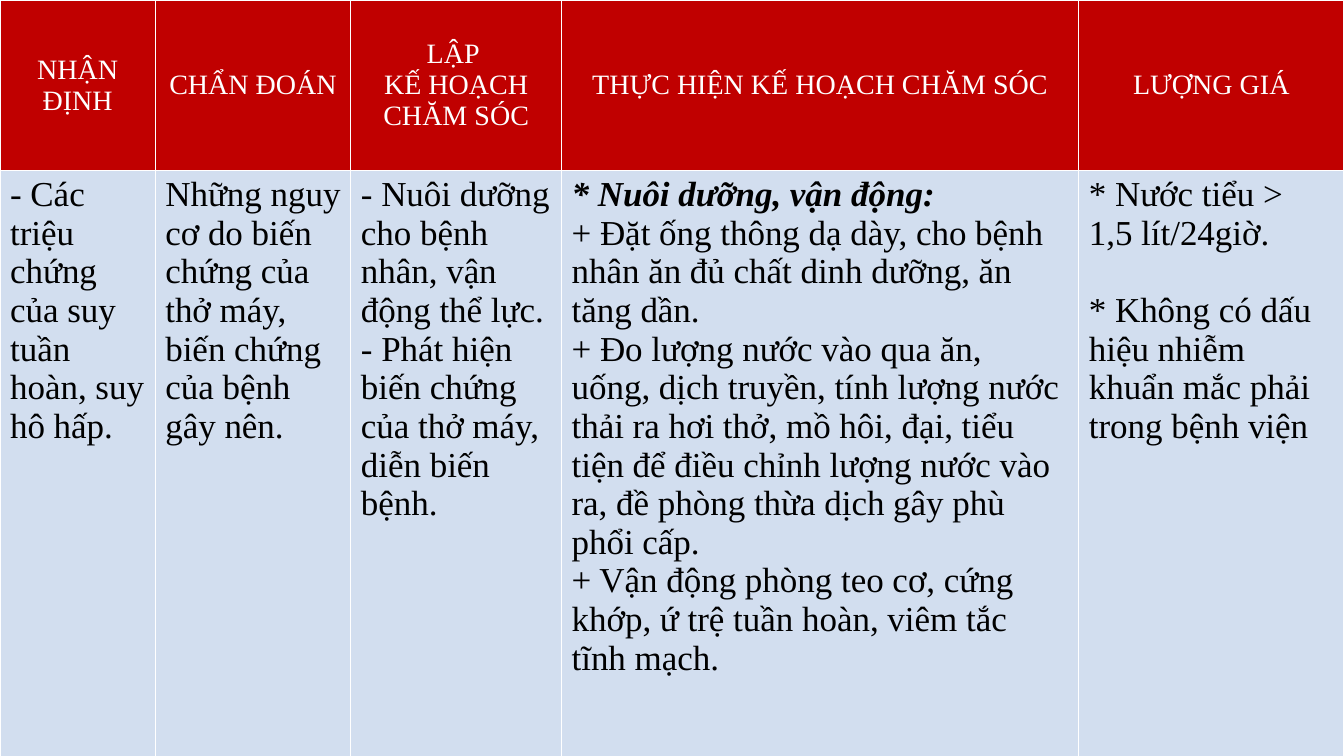
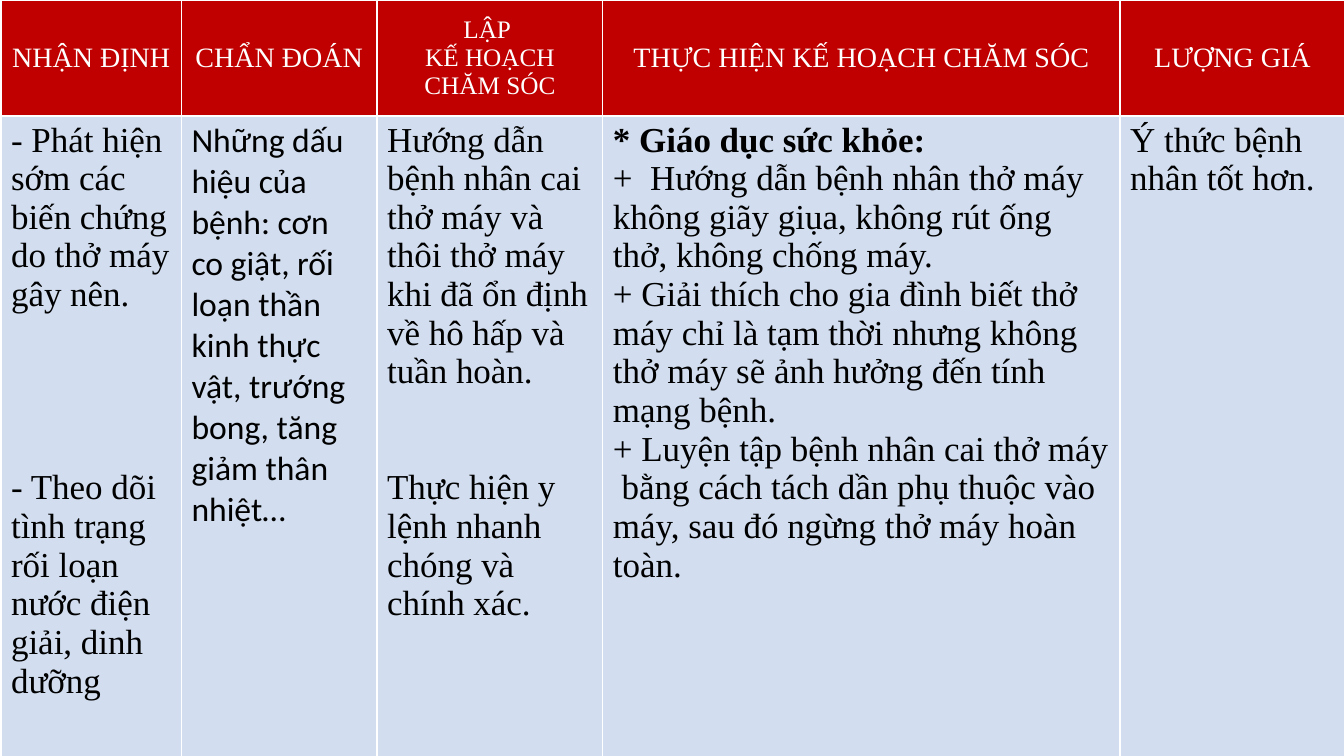
from lxml import etree
from pptx import Presentation
from pptx.dml.color import RGBColor
from pptx.enum.text import MSO_ANCHOR, PP_ALIGN
from pptx.oxml.ns import qn
from pptx.util import Inches, Pt

MIDDLE, TOP = MSO_ANCHOR.MIDDLE, MSO_ANCHOR.TOP
CENTER, LEFT = PP_ALIGN.CENTER, PP_ALIGN.LEFT
BLANK = 6

THEME = {
    "border": "FFFFFF",
    "width": Pt(1),
    "head": {"fill": "C00000", "color": "FFFFFF", "anchor": MIDDLE, "align": CENTER,
             "font": {"name": "Times New Roman", "size": Pt(20), "bold": False}},
    "body": {"fill": "D2DEEF", "color": "000000", "anchor": TOP, "align": LEFT,
             "font": {"name": "Times New Roman", "size": Pt(25), "bold": False}},
    "small": {"size": Pt(18)},
    "sans": {"name": "Calibri", "size": Pt(24)},
    "bold": {"bold": True},
    "slant": {"bold": True, "italic": True},
    "line": 27.6,
}

HEADS = [
    ["NHẬN ĐỊNH"],
    ["CHẨN ĐOÁN"],
    ["LẬP ", "KẾ HOẠCH CHĂM SÓC"],
    ["THỰC HIỆN KẾ HOẠCH CHĂM SÓC"],
    ["LƯỢNG GIÁ"],
]

# Keys of "styles" and "gaps" are (row, column, paragraph).
PAGES = [
    {
        "left": 0,
        "cols": [1.54, 1.94, 2.09, 5.13, 2.63],
        "rows": [1.69, 6.42],
        "body": [
            ["- Các triệu chứng của suy tuần hoàn, suy hô hấp."],
            ["Những nguy cơ do biến chứng của thở máy, biến chứng của bệnh gây nên."],
            ["- Nuôi dưỡng cho bệnh nhân, vận động thể lực.",
             "- Phát hiện biến chứng của thở máy, diễn biến bệnh."],
            ["* Nuôi dưỡng, vận động:",
             "+ Đặt ống thông dạ dày, cho bệnh nhân ăn đủ chất dinh dưỡng, ăn tăng dần.",
             "+ Đo lượng nước vào qua ăn, uống, dịch truyền, tính lượng nước thải ra hơi thở, "
             "mồ hôi, đại, tiểu tiện để điều chỉnh lượng nước vào ra, đề phòng thừa dịch "
             "gây phù phổi cấp.",
             "+ Vận động phòng teo cơ, cứng khớp, ứ trệ tuần hoàn, viêm tắc tĩnh mạch."],
            ["* Nước tiểu > 1,5 lít/24giờ.",
             "* Không có dấu hiệu nhiễm khuẩn mắc phải trong bệnh viện"],
        ],
        "styles": {(1, 3, 0): "slant"},
        "gaps": {(1, 4, 1): 1},
    },
    {
        "left": 0.01,
        "cols": [1.79, 1.94, 2.24, 5.13, 2.23],
        "rows": [1.15, 6.43],
        "body": [
            ["- Phát hiện sớm các biến chứng do thở máy gây nên.",
             "- Theo dõi tình trạng rối loạn nước điện giải, dinh dưỡng"],
            ["Những dấu hiệu của bệnh: cơn co giật, rối loạn thần kinh thực vật, "
             "trướng bong, tăng giảm thân nhiệt…"],
            ["Hướng dẫn bệnh nhân cai thở máy và thôi thở máy khi đã ổn định về hô hấp "
             "và tuần hoàn.",
             "Thực hiện y lệnh nhanh chóng và chính xác."],
            ["* Giáo dục sức khỏe:",
             "+  Hướng dẫn bệnh nhân thở máy không giãy giụa, không rút ống thở, "
             "không chống máy.",
             "+ Giải thích cho gia đình biết thở máy chỉ là tạm thời nhưng không thở máy "
             "sẽ ảnh hưởng đến tính mạng bệnh.",
             "+ Luyện tập bệnh nhân cai thở máy  bằng cách tách dần phụ thuộc vào máy, "
             "sau đó ngừng thở máy hoàn toàn."],
            ["Ý thức bệnh nhân tốt hơn."],
        ],
        "styles": {(0, 2, 0): "small", (0, 2, 1): "small",
                   (1, 1, 0): "sans", (1, 3, 0): "bold"},
        "gaps": {(1, 0, 1): 4, (1, 2, 1): 2},
    },
]


def set_fill(cell, color):
    cell.fill.solid()
    cell.fill.fore_color.rgb = RGBColor.from_string(color)


def set_border(cell):
    props = cell._tc.get_or_add_tcPr()
    for spot, side in enumerate(("a:lnL", "a:lnR", "a:lnT", "a:lnB")):
        line = etree.Element(qn(side), w=str(int(THEME["width"])))
        fill = etree.SubElement(line, qn("a:solidFill"))
        etree.SubElement(fill, qn("a:srgbClr"), val=THEME["border"])
        props.insert(spot, line)


def fill_cell(cell, texts, look, styles, gaps):
    set_fill(cell, look["fill"])
    set_border(cell)
    cell.vertical_anchor = look["anchor"]
    frame = cell.text_frame
    for num, text in enumerate(texts):
        para = frame.add_paragraph() if num else frame.paragraphs[0]
        para.alignment = look["align"]
        if num in gaps:
            para.space_before = Pt(gaps[num] * THEME["line"])
        run = para.add_run()
        run.text = text
        extra = THEME[styles[num]] if num in styles else {}
        for name, value in {**look["font"], **extra}.items():
            setattr(run.font, name, value)
        run.font.color.rgb = RGBColor.from_string(look["color"])


def pick(marks, row, col):
    return {p: value for (r, c, p), value in marks.items() if (r, c) == (row, col)}


def add_page(deck, page):
    slide = deck.slides.add_slide(deck.slide_layouts[BLANK])
    cols, rows = page["cols"], page["rows"]
    table = slide.shapes.add_table(
        len(rows), len(cols), Inches(page["left"]), Inches(0),
        Inches(sum(cols)), Inches(sum(rows))).table
    for col, width in zip(table.columns, cols):
        col.width = Inches(width)
    for row, height in zip(table.rows, rows):
        row.height = Inches(height)
    parts = [(HEADS, THEME["head"]), (page["body"], THEME["body"])]
    for row, (cells, look) in enumerate(parts):
        for col, texts in enumerate(cells):
            fill_cell(table.cell(row, col), texts, look,
                      pick(page["styles"], row, col), pick(page["gaps"], row, col))


def main():
    deck = Presentation()
    deck.slide_width, deck.slide_height = Inches(13.33), Inches(7.5)
    for page in PAGES:
        add_page(deck, page)
    deck.save("out.pptx")


if __name__ == "__main__":
    main()
